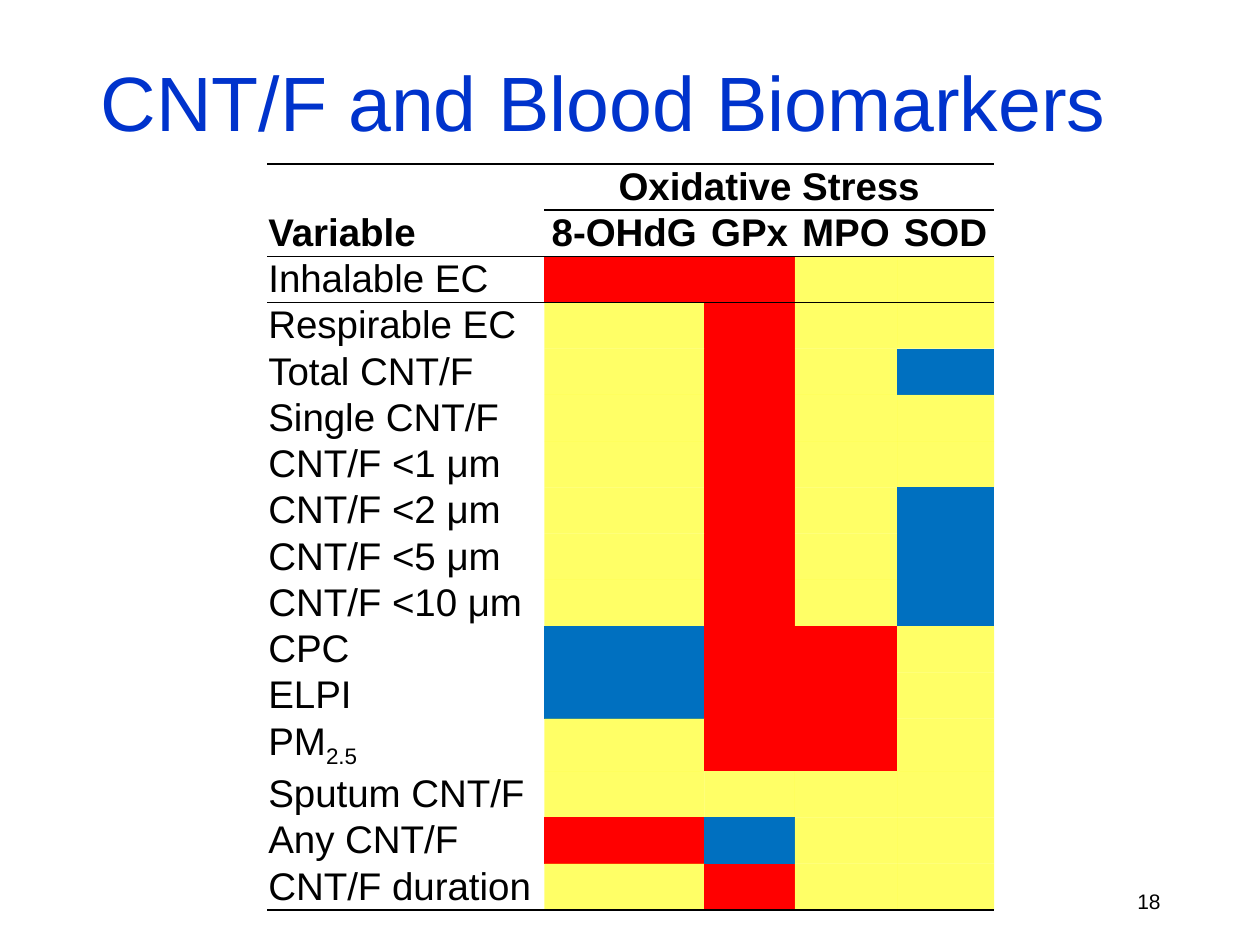
"""Build the slide that maps CNT/F exposure to blood biomarkers."""
from lxml.etree import SubElement
from pptx import Presentation
from pptx.dml.color import RGBColor
from pptx.enum.text import MSO_ANCHOR as Anchor, PP_ALIGN as Align
from pptx.oxml import parse_xml
from pptx.oxml.ns import nsdecls, qn
from pptx.util import Inches, Pt


def tint(code):
    return RGBColor.from_string(code)


def write(frame, text, size=22, color="000000", bold=False, align=Align.LEFT, sub=""):
    frame.word_wrap = True
    frame.vertical_anchor = Anchor.MIDDLE
    line = frame.paragraphs[0]
    line.alignment = align
    for part in filter(None, (text, sub)):
        run = line.add_run()
        run.text = part
        font = run.font
        font.name, font.size, font.bold = "Arial", Pt(size), bold
        font.color.rgb = tint(color)
    if sub:
        font._element.set("baseline", "-25000")


deck = Presentation()
deck.slide_width, deck.slide_height = Inches(10), Inches(7.5)
W, H = deck.slide_width, deck.slide_height
slide = deck.slides.add_slide(deck.slide_layouts[6])
shapes = slide.shapes

title = shapes.add_textbox(int(W * 0.07), int(H * 0.04), int(W * 0.86), Inches(1))
write(title.text_frame, "CNT/F and Blood Biomarkers", size=44, color="0033CC")

number = shapes.add_textbox(Inches(7.06), Inches(6.95), Inches(2.25), Inches(0.4))
write(number.text_frame, "18", size=12, align=Align.RIGHT)

HEADS = ["Variable", "8-OHdG", "GPx", "MPO", "SOD"]
WIDTHS = [2.2, 1.27, 0.72, 0.81, 0.77]
FILLS = {"R": "FF0000", "Y": "FFFF00", "B": "0070C0"}
ROWS = [
    ("Inhalable EC", "RRYY"),
    ("Respirable EC", "YRYY"),
    ("Total CNT/F", "YRYB"),
    ("Single CNT/F", "YRYY"),
    ("CNT/F <1 μm", "YRYY"),
    ("CNT/F <2 μm", "YRYB"),
    ("CNT/F <5 μm", "YRYB"),
    ("CNT/F <10 μm", "YRYB"),
    ("CPC", "BRRY"),
    ("ELPI", "BRRY"),
    ("PM", "YRRY"),
    ("Sputum CNT/F", "YYYY"),
    ("Any CNT/F", "RBYY"),
    ("CNT/F duration", "YRYY"),
]
SUBS = {"PM": "2.5"}
count = len(ROWS) + 2
last = count - 1
step = Inches(5.66) // count

holder = shapes.add_table(count, 5, Inches(2.12), Inches(1.3), Inches(sum(WIDTHS)), step * count)
grid = holder.table
grid.first_row = grid.horz_banding = False
for style in holder._element.iter(qn("a:tableStyleId")):
    style.text = "{2D5ABB26-0587-4C30-8999-92F81FD0307C}"
for col, width in zip(grid.columns, WIDTHS):
    col.width = Inches(width)
for row, (name, _) in zip(grid.rows, [("", ""), ("", "")] + ROWS):
    row.height = step + (Inches(0.05) if name in SUBS else 0)

for r in range(count):
    for c in range(5):
        cell = grid.cell(r, c)
        cell.margin_left = cell.margin_right = Inches(0.01)
        cell.margin_top = cell.margin_bottom = 0
        cell.vertical_anchor = Anchor.MIDDLE
        cell.fill.background()
        props = cell._tc.get_or_add_tcPr()
        if r > 1 and c:
            mark = ROWS[r - 2][1][c - 1]
            cell.fill.solid()
            cell.fill.fore_color.rgb = tint(FILLS[mark])
            if mark == "Y":
                SubElement(next(props.iter(qn("a:srgbClr"))), qn("a:alpha"), val="60000")
        edges = {
            "lnT": r in (0, 2) or (r == 1 and c > 0),
            "lnB": r in (1, last) or (r == 0 and c > 0),
        }
        for spot, edge in enumerate(edge for edge, shown in edges.items() if shown):
            props.insert(spot, parse_xml(
                f'<a:{edge} {nsdecls("a")} w="12700"><a:solidFill>'
                f'<a:srgbClr val="000000"/></a:solidFill></a:{edge}>'))

grid.cell(0, 1).merge(grid.cell(0, 4))
write(grid.cell(0, 1).text_frame, "Oxidative Stress", bold=True, align=Align.CENTER)
for c, head in enumerate(HEADS):
    side = Align.CENTER if c else Align.LEFT
    write(grid.cell(1, c).text_frame, head, bold=True, align=side)
for r, (name, _) in enumerate(ROWS, 2):
    write(grid.cell(r, 0).text_frame, name, sub=SUBS.get(name, ""))

deck.save("out.pptx")
